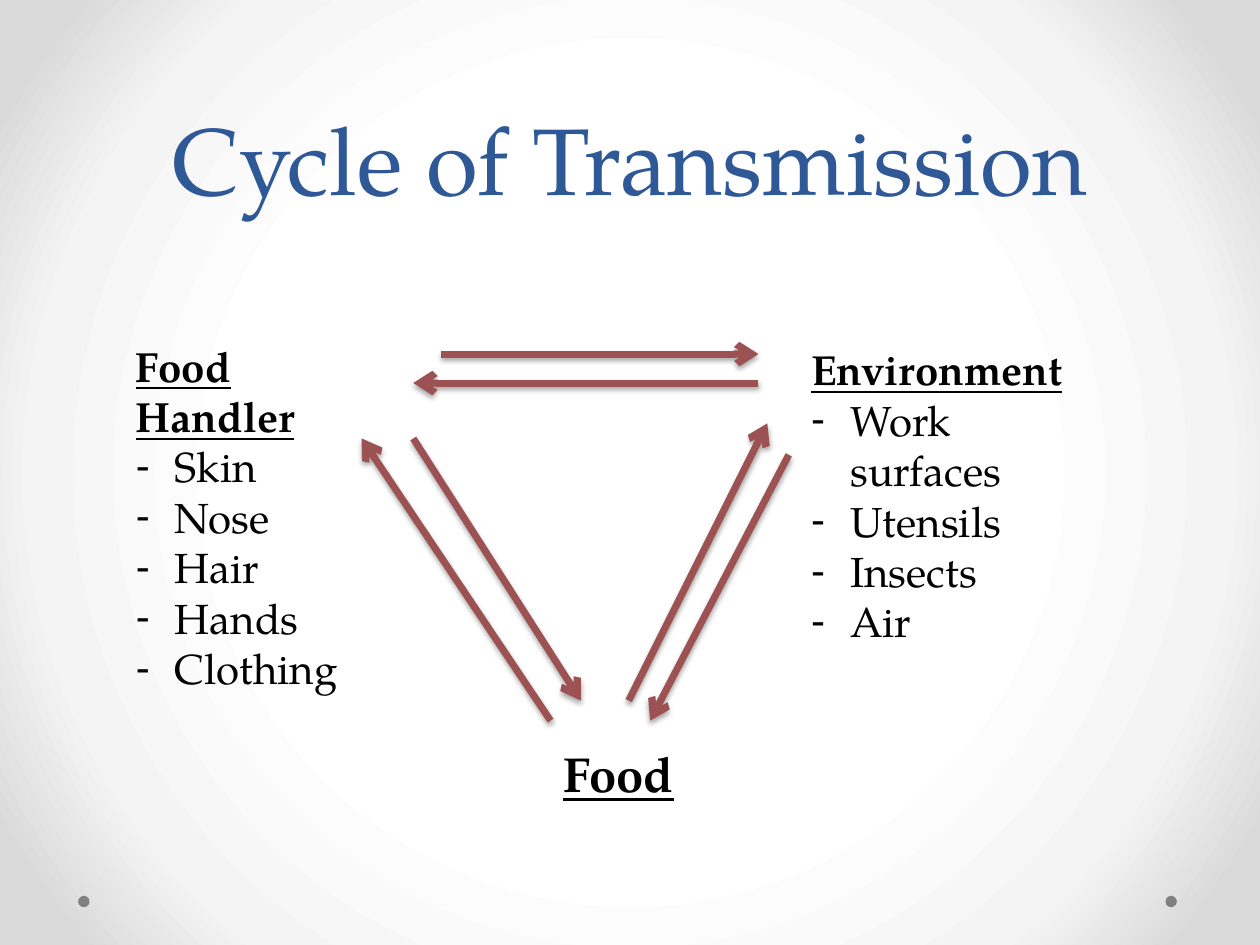
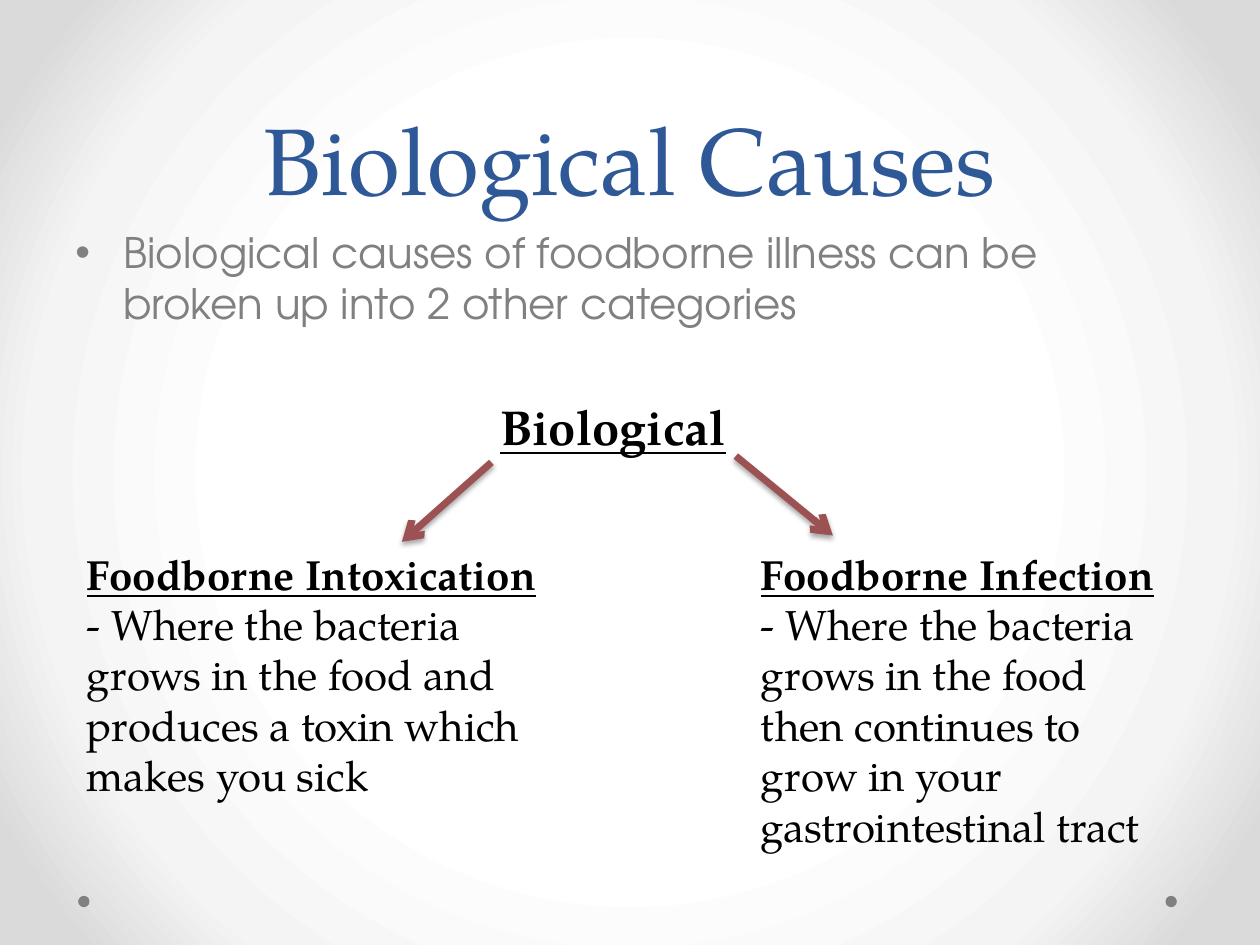
from pptx import Presentation
from pptx.dml.color import RGBColor
from pptx.enum.shapes import MSO_CONNECTOR, MSO_SHAPE
from pptx.enum.text import MSO_ANCHOR, MSO_AUTO_SIZE, PP_ALIGN
from pptx.oxml import parse_xml
from pptx.oxml.ns import nsdecls, qn
from pptx.util import Emu, Pt
from lxml.etree import SubElement

PX = 9144
SERIF = "TeX Gyre Pagella"
SANS = "TeX Gyre Adventor"
COLORS = {
    "title": "2F5897",
    "text": "000000",
    "grey": "808080",
    "arrow": "9C5252",
    "shadow": "000000",
}
GLOW = [(50, "FFFFFF"), (76, "F4F4F4"), (92, "DADADA")]


def px(n):
    return Emu(n * PX)


def rgb(name):
    return RGBColor.from_string(COLORS[name])


def set_background(prs):
    stops = "".join(
        f'<a:gs pos="{pos * 1000}"><a:srgbClr val="{color}"/></a:gs>'
        for pos, color in GLOW
    )
    bg = parse_xml(
        f'<p:bg {nsdecls("p", "a")}><p:bgPr><a:gradFill rotWithShape="1">'
        f'<a:gsLst>{stops}</a:gsLst><a:path path="circle">'
        '<a:fillToRect l="50000" t="50000" r="50000" b="50000"/></a:path>'
        '</a:gradFill><a:effectLst/></p:bgPr></p:bg>'
    )
    c_sld = prs.slide_master.element.find(qn("p:cSld"))
    old = c_sld.find(qn("p:bg"))
    if old is not None:
        c_sld.remove(old)
    c_sld.insert(0, bg)


def add_box(s, x, y, w, h):
    tf = s.shapes.add_textbox(px(x), px(y), px(w), px(h)).text_frame
    tf.word_wrap = True
    return tf


def add_run(p, text, size, color="text", font=SERIF, heading=False):
    r = p.add_run()
    r.text = text
    r.font.name = font
    r.font.size = Pt(size)
    r.font.color.rgb = rgb(color)
    r.font.bold = heading
    r.font.underline = heading


def add_bullet(p, char, indent):
    pPr = p._p.get_or_add_pPr()
    pPr.set("marL", str(px(indent)))
    pPr.set("indent", str(-px(indent)))
    SubElement(pPr, qn("a:buFont")).set("typeface", "Arial")
    SubElement(pPr, qn("a:buChar")).set("char", char)


def add_dot(s, x):
    dot = s.shapes.add_shape(MSO_SHAPE.OVAL, px(x), px(711), px(9), px(9))
    dot.shadow.inherit = False
    dot.fill.solid()
    dot.fill.fore_color.rgb = rgb("grey")
    dot.line.fill.background()


def add_titled_slide(prs, title):
    s = prs.slides.add_slide(prs.slide_layouts[6])
    for x in (925, 62):
        add_dot(s, x)
    tf = add_box(s, 50, 0, 900, 175)
    tf.vertical_anchor = MSO_ANCHOR.BOTTOM
    p = tf.paragraphs[0]
    p.alignment = PP_ALIGN.CENTER
    p.line_spacing = Pt(58)
    add_run(p, title, 54, "title")
    return s


def add_intro(s, text):
    p = add_box(s, 50, 175, 900, 145).paragraphs[0]
    p.space_before = Pt(5)
    add_bullet(p, "•", 38)
    add_run(p, text, 24, "grey", SANS)


def add_topic(s, box, heading, lines=(), size=24, bullet=None):
    tf = add_box(s, *box)
    tf.auto_size = MSO_AUTO_SIZE.SHAPE_TO_FIT_TEXT
    add_run(tf.paragraphs[0], heading, size, heading=True)
    for line in lines:
        p = tf.add_paragraph()
        if bullet:
            add_bullet(p, bullet, 31)
        add_run(p, line, size)


def add_arrow(s, x1, y1, x2, y2):
    arrow = s.shapes.add_connector(
        MSO_CONNECTOR.STRAIGHT, px(x1), px(y1), px(x2), px(y2)
    )
    arrow.line.color.rgb = rgb("arrow")
    arrow.line.width = Pt(4)
    SubElement(arrow.line._get_or_add_ln(), qn("a:tailEnd")).set("type", "arrow")
    arrow._element.spPr.append(parse_xml(
        f'<a:effectLst {nsdecls("a")}><a:outerShdw blurRad="{Pt(3.1)}" '
        f'dist="{Pt(1.8)}" dir="5400000" rotWithShape="0">'
        f'<a:srgbClr val="{COLORS["shadow"]}"><a:alpha val="35000"/></a:srgbClr>'
        '</a:outerShdw></a:effectLst>'
    ))


def add_cycle_slide(prs):
    s = add_titled_slide(prs, "Cycle of Transmission")
    add_topic(s, (98, 265, 213, 293), "Food Handler",
              ["Skin", "Nose", "Hair", "Hands", "Clothing"], bullet="-")
    add_topic(s, (634, 268, 236, 252), "Environment",
              ["Work surfaces", "Utensils", "Insects", "Air"], bullet="-")
    add_topic(s, (437, 585, 268, 57), "Food", size=28)
    for ends in (
        (350, 281, 602, 281),
        (328, 348, 461, 556),
        (499, 556, 609, 336),
        (602, 304, 328, 304),
        (437, 572, 287, 348),
        (626, 361, 516, 572),
    ):
        add_arrow(s, *ends)


def add_causes_slide(prs):
    s = add_titled_slide(prs, "Biological Causes")
    add_intro(s, "Biological causes of foodborne illness can be "
                 "broken up into 2 other categories")
    add_topic(s, (387, 310, 205, 57), "Biological", size=28)
    add_topic(s, (59, 430, 378, 212), "Foodborne Intoxication",
              ["- Where the bacteria grows in the food and "
               "produces a toxin which makes you sick"])
    add_topic(s, (594, 430, 346, 252), "Foodborne Infection",
              ["- Where the bacteria grows in the food then continues "
               "to grow in your gastrointestinal tract"])
    add_arrow(s, 390, 367, 319, 430)
    add_arrow(s, 584, 362, 661, 425)


def main():
    prs = Presentation()
    prs.slide_width = px(1000)
    prs.slide_height = px(750)
    set_background(prs)
    add_cycle_slide(prs)
    add_causes_slide(prs)
    prs.save("out.pptx")


if __name__ == "__main__":
    main()
